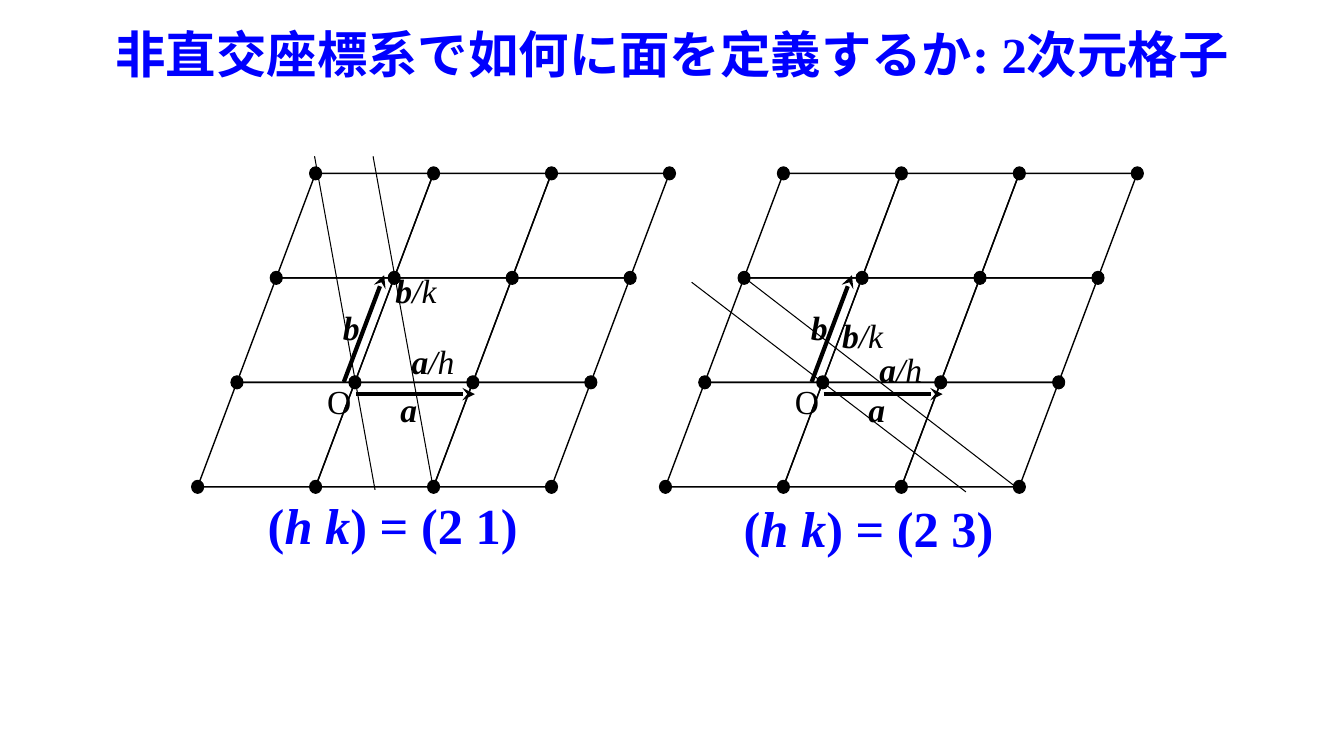
from lxml import etree
from pptx import Presentation
from pptx import util as u
from pptx.dml.color import RGBColor
from pptx.enum import shapes, text
from pptx.oxml.ns import qn

COLORS = {"ink": "000000", "accent": "0000FF"}
FONT = "Times New Roman"
CELLS = 3           # cells along each lattice direction
STEP, SLANT = 1.17, 0.39
DOT_W, DOT_H = 0.12, 0.13

# Each panel: lattice box (left, top, height), two plane traces and labels,
# all positions after the box being relative to its top left corner
PANELS = [
    {"box": (1.96, 1.72, 3.11),
     "planes": [((1.74, -0.17), (2.34, 3.14)), ((1.16, -0.17), (1.76, 3.14))],
     "a/h": (2.02, 1.61), "b/k": (1.86, 0.91),
     "caption": (0.58, 3.13), "indices": "2 1"},
    {"box": (6.6, 1.72, 3.11),
     "planes": [((0.79, 1.04), (3.5, 3.13)), ((0.26, 1.08), (2.98, 3.16))],
     "a/h": (2.02, 1.69), "b/k": (1.65, 1.36),
     "caption": (0.66, 3.16), "indices": "2 3"},
]


def color(name):
    return RGBColor.from_string(COLORS[name])


def style_span(span, size, tone, bold=False, italic=False):
    font = span.font
    font.name, font.size = FONT, u.Pt(size)
    font.bold, font.italic = bold, italic
    font.color.rgb = color(tone)


def add_title(slide, wording, width):
    title = slide.shapes.title
    title.left, title.top = u.Inches(0), u.Inches(0)
    title.width, title.height = width, u.Inches(1.06)
    frame = title.text_frame
    frame.text = wording
    frame.auto_size = text.MSO_AUTO_SIZE.NONE
    frame.vertical_anchor = text.MSO_ANCHOR.MIDDLE
    para = frame.paragraphs[0]
    para.alignment = text.PP_ALIGN.CENTER
    style_span(para.runs[0], 36, "accent", bold=True)


def add_label(slide, x, y, width, height, spans, size=24, tone="ink"):
    """Centred label; spans are (wording, bold, italic)."""
    box = slide.shapes.add_textbox(*map(u.Inches, (x, y, width, height)))
    frame = box.text_frame
    frame.word_wrap = False
    frame.auto_size = text.MSO_AUTO_SIZE.SHAPE_TO_FIT_TEXT
    para = frame.paragraphs[0]
    para.alignment = text.PP_ALIGN.CENTER
    for wording, bold, italic in spans:
        span = para.add_run()
        span.text = wording
        style_span(span, size, tone, bold, italic)


def add_line(slide, start, end, weight, arrow=False):
    line = slide.shapes.add_connector(
        shapes.MSO_CONNECTOR.STRAIGHT, *map(u.Inches, (*start, *end)))
    line.line.color.rgb = color("ink")
    line.line.width = u.Pt(weight)
    if arrow:
        tip = etree.SubElement(line.line._get_or_add_ln(), qn("a:tailEnd"))
        tip.set("type", "stealth")
    etree.SubElement(line._element.spPr, qn("a:effectLst"))


def add_outline(slide, kind, x, y, width, height, weight):
    shape = slide.shapes.add_shape(
        kind, *map(u.Inches, (x, y, width, height)))
    shape.shadow.inherit = False
    shape.fill.background()
    shape.line.color.rgb = color("ink")
    shape.line.width = u.Pt(weight)
    return shape


def add_lattice(slide, left, top, height):
    row_height = height / CELLS
    bottom = top + height
    # Cells
    for row in range(CELLS):
        for col in range(CELLS):
            cell = add_outline(
                slide, shapes.MSO_SHAPE.PARALLELOGRAM,
                left + row * SLANT + col * STEP,
                bottom - (row + 1) * row_height,
                STEP + SLANT, row_height, 1)
            cell.adjustments[0] = SLANT / row_height
    # Lattice points
    for row in range(CELLS + 1):
        for col in range(CELLS + 1):
            dot = add_outline(
                slide, shapes.MSO_SHAPE.OVAL,
                left + row * SLANT + col * STEP - DOT_W / 2,
                bottom - row * row_height - DOT_H / 2,
                DOT_W, DOT_H, 0.75)
            dot.fill.solid()
            dot.fill.fore_color.rgb = color("ink")


def add_panel(slide, panel):
    left, top, height = panel["box"]

    def place(point):
        return left + point[0], top + point[1]

    add_lattice(slide, left, top, height)

    # Basis vectors and origin
    add_line(slide, place((1.57, 2.19)), place((2.75, 2.19)), 3, arrow=True)
    add_line(slide, place((1.45, 2.07)), place((1.85, 1.01)), 3, arrow=True)
    add_label(slide, *place((1.91, 2.09)), 0.37, 0.5, [("a", True, True)])
    add_label(slide, *place((1.34, 1.28)), 0.37, 0.5, [("b", True, True)])
    add_label(slide, *place((1.18, 2.01)), 0.45, 0.5, [("O", False, False)])

    # Plane traces and their intercepts
    for start, end in panel["planes"]:
        add_line(slide, place(start), place(end), 0.75)
    for intercept, width in (("a/h", 0.63), ("b/k", 0.61)):
        add_label(slide, *place(panel[intercept]), width, 0.5,
                  [(intercept[0], True, True), (intercept[1:], False, True)])

    # Caption
    add_label(slide, *place(panel["caption"]), 2.71, 0.71,
              [("(", True, False), ("h k", True, True),
               (f") = ({panel['indices']})", True, False)], 36, "accent")


def main():
    deck = Presentation()
    deck.slide_width, deck.slide_height = u.Inches(13.33), u.Inches(7.5)
    slide = deck.slides.add_slide(deck.slide_layouts.get_by_name("Title Only"))
    add_title(slide, "非直交座標系で如何に面を定義するか: 2次元格子", deck.slide_width)
    for panel in PANELS:
        add_panel(slide, panel)
    deck.save("out.pptx")


if __name__ == "__main__":
    main()
